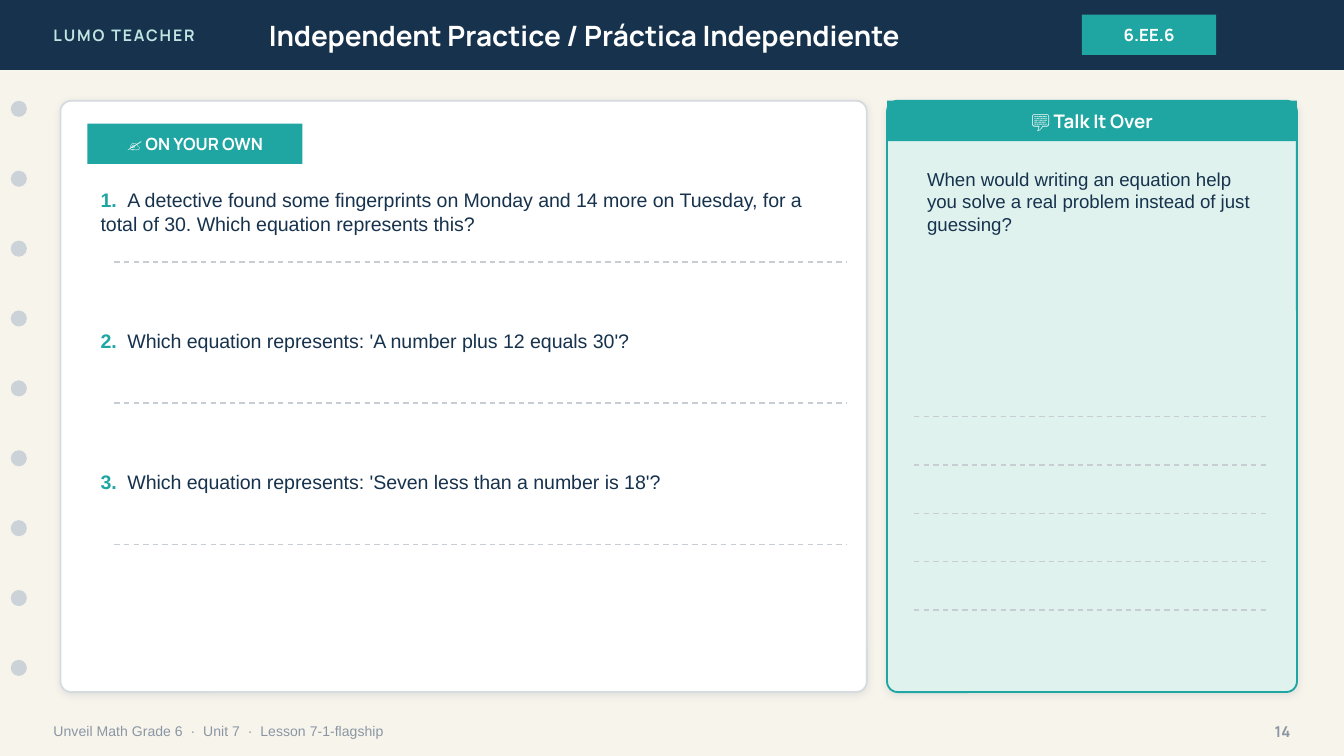
import lxml.etree
import pptx
import pptx.dml.color
import pptx.enum.dml
import pptx.enum.shapes
import pptx.enum.text
import pptx.oxml
import pptx.oxml.ns
import pptx.util

Inches = pptx.util.Inches
SHAPE = pptx.enum.shapes.MSO_SHAPE
ALIGN = pptx.enum.text.PP_ALIGN
ANCHOR = pptx.enum.text.MSO_ANCHOR

THEME = {
    "navy": "17324D", "teal": "1FA6A2", "mint": "DFF2EE", "pale": "BFE6E2",
    "cream": "F7F4EC", "white": "FFFFFF", "hole": "CBD3D9", "muted": "8A96A3",
    "border": "D6DBDF", "rule": "C7CDD2", "shadow": "1C2E42",
    "display": "Manrope", "body": "Arial",
    "title": 15, "question": 10.5, "prompt": 10, "label": 9,
    "brand": 8.5, "number": 8, "footer": 7.5,
}

BRAND = "LUMO TEACHER"
TITLE = "Independent Practice / Práctica Independiente"
STANDARD = "6.EE.6"
PRACTICE_LABEL = "✍️ ON YOUR OWN"
QUESTIONS = [
    "A detective found some fingerprints on Monday and 14 more on Tuesday, "
    "for a total of 30. Which equation represents this?",
    "Which equation represents: 'A number plus 12 equals 30'?",
    "Which equation represents: 'Seven less than a number is 18'?",
]
TALK_LABEL = "💬 Talk It Over"
TALK_PROMPT = ("When would writing an equation help you solve a real problem "
               "instead of just guessing?")
FOOTER = "Unveil Math Grade 6  ·  Unit 7  ·  Lesson 7-1-flagship"
PAGE_NUMBER = "14"

HOLES, HOLE_STEP = 9, 0.52
QUESTION_TOP, QUESTION_STEP = 1.35, 1.05
TALK_LINES, TALK_LINE_TOP, TALK_LINE_STEP = 5, 3.1, 0.36
CARD_TOP, CARD_HEIGHT = 0.75, 4.4


def color(name):
    return pptx.dml.color.RGBColor.from_string(THEME[name])


def write(shape, text, size="label", ink="white", font="display", bold=True,
          align=ALIGN.LEFT, anchor=ANCHOR.MIDDLE, spacing=None, lead=None, tab=None):
    frame = shape.text_frame
    frame.word_wrap = True
    frame.vertical_anchor = anchor
    para = frame.paragraphs[0]
    para.alignment = align
    if tab:
        stops = lxml.etree.SubElement(para._p.get_or_add_pPr(), pptx.oxml.ns.qn("a:tabLst"))
        lxml.etree.SubElement(stops, pptx.oxml.ns.qn("a:tab"), pos=str(Inches(tab)), algn="l")
    parts = [(text, ink, bold)]
    if lead:
        parts.insert(0, (lead, "teal", True))
    for words, tint, weight in parts:
        span = para.add_run()
        span.text = words
        span.font.name = THEME[font]
        span.font.size = pptx.util.Pt(THEME[size])
        span.font.bold = weight
        span.font.color.rgb = color(tint)
        if spacing:
            span.font._element.set("spc", str(spacing * 100))


def add_text(page, place, text, **style):
    box = page.shapes.add_textbox(*map(Inches, place))
    write(box, text, **style)


def add_block(page, kind, place, fill):
    block = page.shapes.add_shape(kind, *map(Inches, place))
    block.shadow.inherit = False
    block.fill.solid()
    block.fill.fore_color.rgb = color(fill)
    block.line.fill.background()
    return block


def add_label(page, place, text, **style):
    label = add_block(page, SHAPE.RECTANGLE, place, "teal")
    write(label, text, align=ALIGN.CENTER, **style)


def add_card(page, left, width, fill, border, radius):
    card = add_block(page, SHAPE.ROUNDED_RECTANGLE, (left, CARD_TOP, width, CARD_HEIGHT), fill)
    card.adjustments[0] = radius
    card.line.color.rgb = color(border)
    card.line.width = pptx.util.Pt(1)
    effects = card._element.spPr.find(pptx.oxml.ns.qn("a:effectLst"))
    effects.append(pptx.oxml.parse_xml(
        f'<a:outerShdw {pptx.oxml.ns.nsdecls("a")} blurRad="{pptx.util.Pt(4)}" '
        f'dist="{pptx.util.Pt(1)}" dir="5400000" algn="ctr" rotWithShape="0">'
        f'<a:srgbClr val="{THEME["shadow"]}"><a:alpha val="10000"/></a:srgbClr></a:outerShdw>'))


def add_answer_line(page, left, right, top):
    rule = page.shapes.add_connector(
        pptx.enum.shapes.MSO_CONNECTOR.STRAIGHT, *map(Inches, (left, top, right, top)))
    rule.line.color.rgb = color("rule")
    rule.line.width = pptx.util.Pt(0.75)
    rule.line.dash_style = pptx.enum.dml.MSO_LINE.DASH
    lxml.etree.SubElement(rule._element.spPr, pptx.oxml.ns.qn("a:effectLst"))


def add_header(page):
    add_block(page, SHAPE.RECTANGLE, (0, 0, 10, 0.52), "navy")
    add_text(page, (0.3, 0, 2.4, 0.52), BRAND, size="brand", ink="pale", spacing=1)
    title = page.shapes.title
    title.left, title.top, title.width, title.height = map(Inches, (1.9, 0, 5.6, 0.52))
    write(title, TITLE, size="title")
    page.shapes._spTree.append(title._element)
    add_label(page, (8.05, 0.11, 1, 0.3), STANDARD)


def add_margin_and_footer(page):
    for index in range(HOLES):
        add_block(page, SHAPE.OVAL, (0.08, CARD_TOP + index * HOLE_STEP, 0.12, 0.12), "hole")
    add_text(page, (0.3, 5.3, 7, 0.28), FOOTER, size="footer", ink="muted",
             font="body", bold=False)
    add_text(page, (9.2, 5.3, 0.5, 0.28), PAGE_NUMBER, size="number", ink="muted",
             align=ALIGN.RIGHT)


def add_practice(page):
    add_card(page, 0.45, 6, "white", "border", 0.018)
    add_label(page, (0.65, 0.92, 1.6, 0.3), PRACTICE_LABEL)
    for index, question in enumerate(QUESTIONS):
        top = QUESTION_TOP + index * QUESTION_STEP
        add_text(page, (0.65, top, 5.65, 0.5), question, size="question", ink="navy",
                 font="body", bold=False, anchor=ANCHOR.TOP,
                 lead=f"{index + 1}.\t", tab=0.2)
        add_answer_line(page, 0.85, 6.3, top + 0.6)


def add_talk(page):
    add_card(page, 6.6, 3.05, "mint", "teal", 0.026)
    add_label(page, (6.6, CARD_TOP, 3.05, 0.3), TALK_LABEL, size="prompt")
    add_text(page, (6.8, 1.2, 2.7, 1.7), TALK_PROMPT, size="prompt", ink="navy",
             font="body", bold=False, anchor=ANCHOR.TOP)
    for index in range(TALK_LINES):
        add_answer_line(page, 6.8, 9.45, TALK_LINE_TOP + index * TALK_LINE_STEP)


def main():
    deck = pptx.Presentation()
    deck.slide_width = Inches(10)
    deck.slide_height = deck.slide_width * 9 // 16
    page = deck.slides.add_slide(deck.slide_layouts.get_by_name("Title Only"))
    page.background.fill.solid()
    page.background.fill.fore_color.rgb = color("cream")
    add_header(page)
    add_margin_and_footer(page)
    add_practice(page)
    add_talk(page)
    deck.save("out.pptx")


if __name__ == "__main__":
    main()
